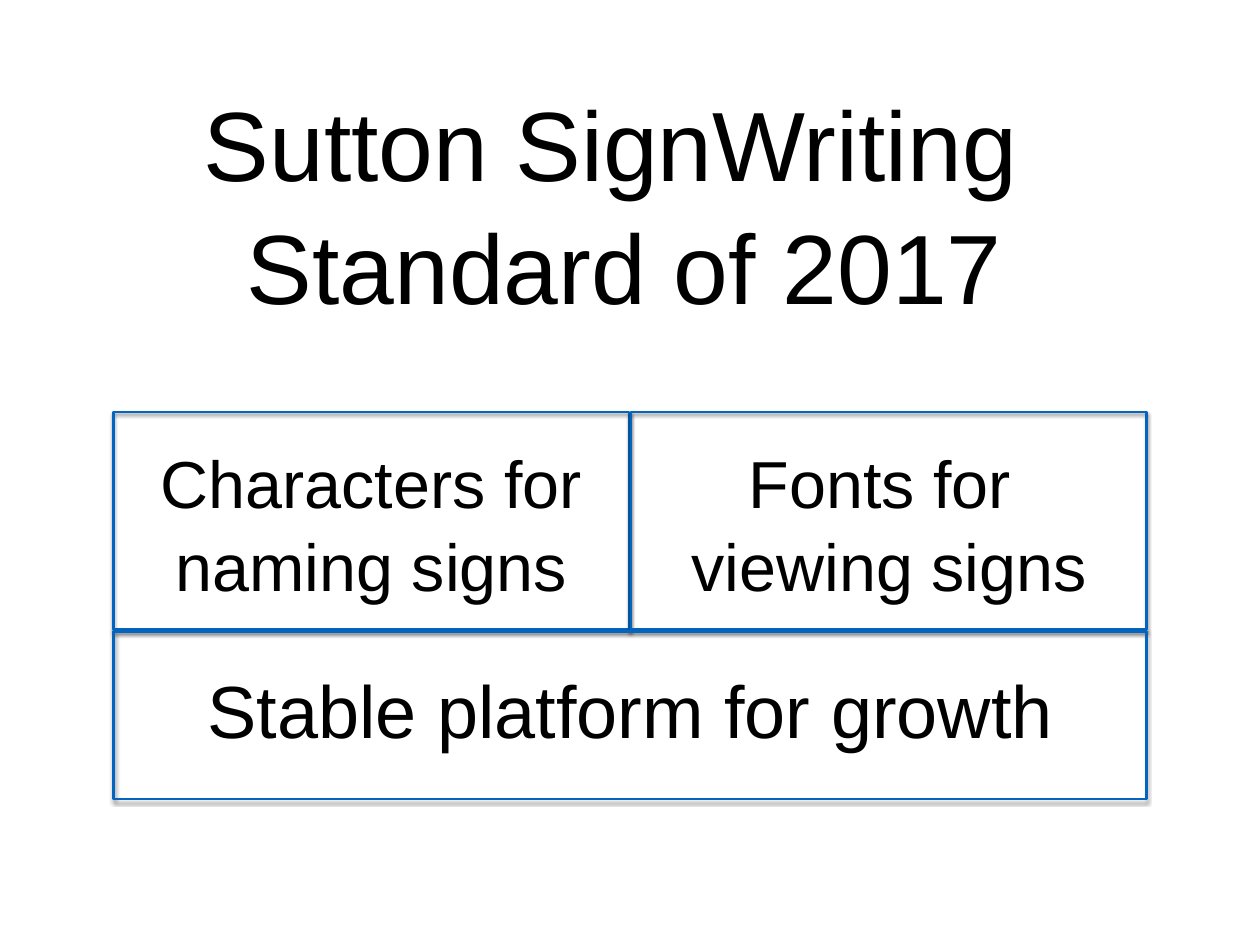
from dataclasses import dataclass

import lxml.etree
import pptx
import pptx.dml.color
import pptx.enum.shapes
import pptx.enum.text
import pptx.oxml.ns
import pptx.util
from pptx.util import Inches

BLACK = pptx.dml.color.RGBColor(0x00, 0x00, 0x00)
BLUE = pptx.dml.color.RGBColor(0x03, 0x65, 0xC0)

# Block diagram: two columns above one full-width base
LEFT, TOP = 1.28, 4.65
COL_W, TOP_H, BASE_H = 5.82, 2.46, 1.89
GAP = 0.02


@dataclass
class Box:
    left: float
    top: float
    width: float
    height: float


@dataclass
class Label:
    text: str
    box: Box
    size: int
    anchor: pptx.enum.text.MSO_ANCHOR = pptx.enum.text.MSO_ANCHOR.MIDDLE
    wrap: bool = False


LABELS = [
    Label("Sutton SignWriting \nStandard of 2017", Box(0.7, 0.65, 12.7, 3.07), 80,
          anchor=pptx.enum.text.MSO_ANCHOR.BOTTOM, wrap=True),
    Label("Characters for\nnaming signs", Box(1.65, 4.93, 5.08, 1.92), 54),
    Label("Fonts for \nviewing signs", Box(7.74, 4.93, 4.59, 1.92), 54),
    Label("Stable platform for growth", Box(2.28, 7.43, 9.67, 1.11), 60),
]

BLOCKS = [
    Box(LEFT, TOP, COL_W, TOP_H),
    Box(LEFT + COL_W + GAP, TOP, COL_W, TOP_H),
    Box(LEFT, TOP + TOP_H + GAP, 2 * COL_W + GAP, BASE_H),
]


def place(box: Box) -> tuple:
    return tuple(Inches(v) for v in (box.left, box.top, box.width, box.height))


def add_text(slide, text: str, *, box: Box, size: int, anchor, wrap: bool) -> None:
    tf = slide.shapes.add_textbox(*place(box)).text_frame
    tf.word_wrap = wrap
    tf.vertical_anchor = anchor
    tf.margin_left = tf.margin_right = Inches(0.06)
    tf.margin_top = tf.margin_bottom = Inches(0.06)
    tf.text = text
    for p in tf.paragraphs:
        p.alignment = pptx.enum.text.PP_ALIGN.CENTER
        p.line_spacing = 1.04
        for r in p.runs:
            r.font.name = "Arial"
            r.font.size = pptx.util.Pt(size)
            r.font.color.rgb = BLACK


def add_shadow(sp) -> None:
    """Soft black shadow straight below the outline."""
    sp.shadow.inherit = False
    qn = pptx.oxml.ns.qn
    effects = sp.element.spPr.find(qn("a:effectLst"))
    shadow = lxml.etree.SubElement(
        effects, qn("a:outerShdw"), blurRad=str(pptx.util.Pt(3)),
        dist=str(pptx.util.Pt(2)), dir="5400000", rotWithShape="0")
    color = lxml.etree.SubElement(shadow, qn("a:srgbClr"), val=str(BLACK))
    lxml.etree.SubElement(color, qn("a:alpha"), val="50000")


def add_block(slide, box: Box) -> None:
    sp = slide.shapes.add_shape(pptx.enum.shapes.MSO_SHAPE.RECTANGLE, *place(box))
    sp.fill.background()
    sp.line.color.rgb = BLUE
    sp.line.width = pptx.util.Pt(2)
    add_shadow(sp)


def main() -> None:
    prs = pptx.Presentation()
    prs.slide_width, prs.slide_height = Inches(14.22), Inches(10.67)
    slide = prs.slides.add_slide(prs.slide_layouts[6])

    # Title and block captions
    for label in LABELS:
        add_text(slide, label.text, box=label.box, size=label.size,
                 anchor=label.anchor, wrap=label.wrap)

    # Outlined blocks
    for box in BLOCKS:
        add_block(slide, box)

    prs.save("out.pptx")


if __name__ == "__main__":
    main()
